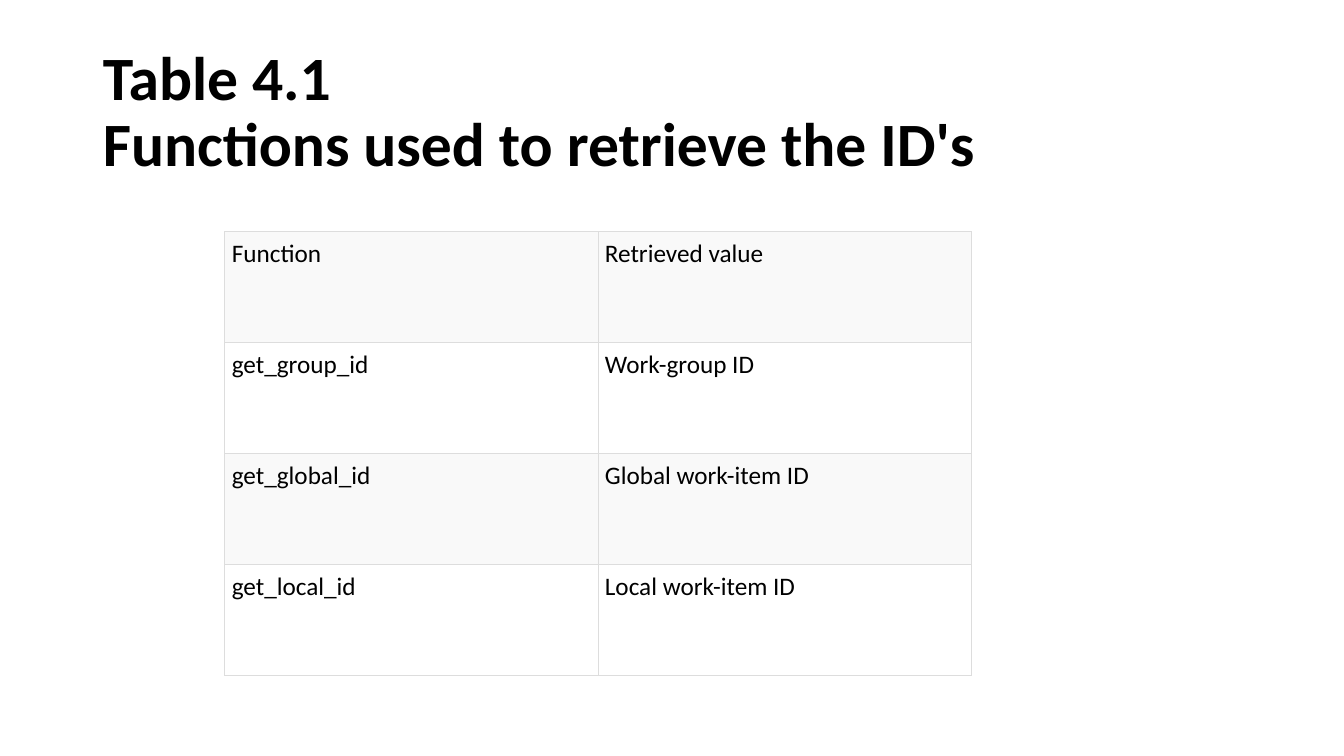
from typing import NamedTuple

from lxml.etree import SubElement
from pptx import Presentation
from pptx.dml.color import RGBColor
from pptx.enum.text import MSO_ANCHOR, MSO_AUTO_SIZE, PP_ALIGN
from pptx.oxml.ns import qn
from pptx.util import Emu, Pt

EMU_PER_PX = 9144  # 100 px to the inch
FONT = "Calibri"
BLACK = RGBColor(0x00, 0x00, 0x00)
WHITE = RGBColor(0xFF, 0xFF, 0xFF)
BAND_GREY = RGBColor(0xF9, 0xF9, 0xF9)
BORDER_GREY = RGBColor(0xDD, 0xDD, 0xDD)
BORDER_WIDTH = Pt(0.6)


class FunctionRow(NamedTuple):
    function: str
    retrieved_value: str


ID_FUNCTIONS = [
    FunctionRow("Function", "Retrieved value"),
    FunctionRow("get_group_id", "Work-group ID"),
    FunctionRow("get_global_id", "Global work-item ID"),
    FunctionRow("get_local_id", "Local work-item ID"),
]


def px(length: int) -> Emu:
    return Emu(length * EMU_PER_PX)


def write_text(frame, text: str, *, size: int, bold: bool = False,
               spacing: float = 1.0) -> None:
    paragraph = frame.paragraphs[0]
    paragraph.text = text
    paragraph.alignment = PP_ALIGN.LEFT
    paragraph.line_spacing = spacing
    for run in paragraph.runs:
        run.font.name = FONT
        run.font.size = Pt(size)
        run.font.bold = bold
        run.font.color.rgb = BLACK


def draw_borders(cell) -> None:
    properties = cell._tc.get_or_add_tcPr()
    for side in ("a:lnL", "a:lnR", "a:lnT", "a:lnB"):
        line = SubElement(properties, qn(side), w=str(int(BORDER_WIDTH)))
        fill = SubElement(line, qn("a:solidFill"))
        SubElement(fill, qn("a:srgbClr"), val=str(BORDER_GREY))


def format_cell(cell, text: str, background: RGBColor) -> None:
    cell.margin_left = cell.margin_right = px(7)
    cell.margin_top = cell.margin_bottom = px(7)
    cell.vertical_anchor = MSO_ANCHOR.TOP
    draw_borders(cell)
    cell.fill.solid()
    cell.fill.fore_color.rgb = background
    write_text(cell.text_frame, text, size=18)


def add_heading(slide, text: str) -> None:
    heading = slide.shapes.title
    heading.left, heading.top = px(92), px(40)
    heading.width, heading.height = px(1150), px(145)
    frame = heading.text_frame
    frame.word_wrap = True
    frame.auto_size = MSO_AUTO_SIZE.NONE
    frame.vertical_anchor = MSO_ANCHOR.MIDDLE
    write_text(frame, text, size=44, bold=True, spacing=0.9)


def add_function_table(slide, functions: list[FunctionRow]) -> None:
    table = slide.shapes.add_table(
        len(functions), len(FunctionRow._fields),
        px(223), px(230), px(740), px(440)).table
    table.first_row = False
    table.horz_banding = False
    for row, entry in enumerate(functions):
        background = WHITE if row % 2 else BAND_GREY
        for column, text in enumerate(entry):
            format_cell(table.cell(row, column), text, background)


def main() -> None:
    presentation = Presentation()
    presentation.slide_width, presentation.slide_height = px(1333), px(750)
    slide = presentation.slides.add_slide(presentation.slide_layouts[5])

    # Heading
    add_heading(slide, "Table 4.1\nFunctions used to retrieve the ID's")

    # ID functions and what they return
    add_function_table(slide, ID_FUNCTIONS)

    presentation.save("out.pptx")


if __name__ == "__main__":
    main()
